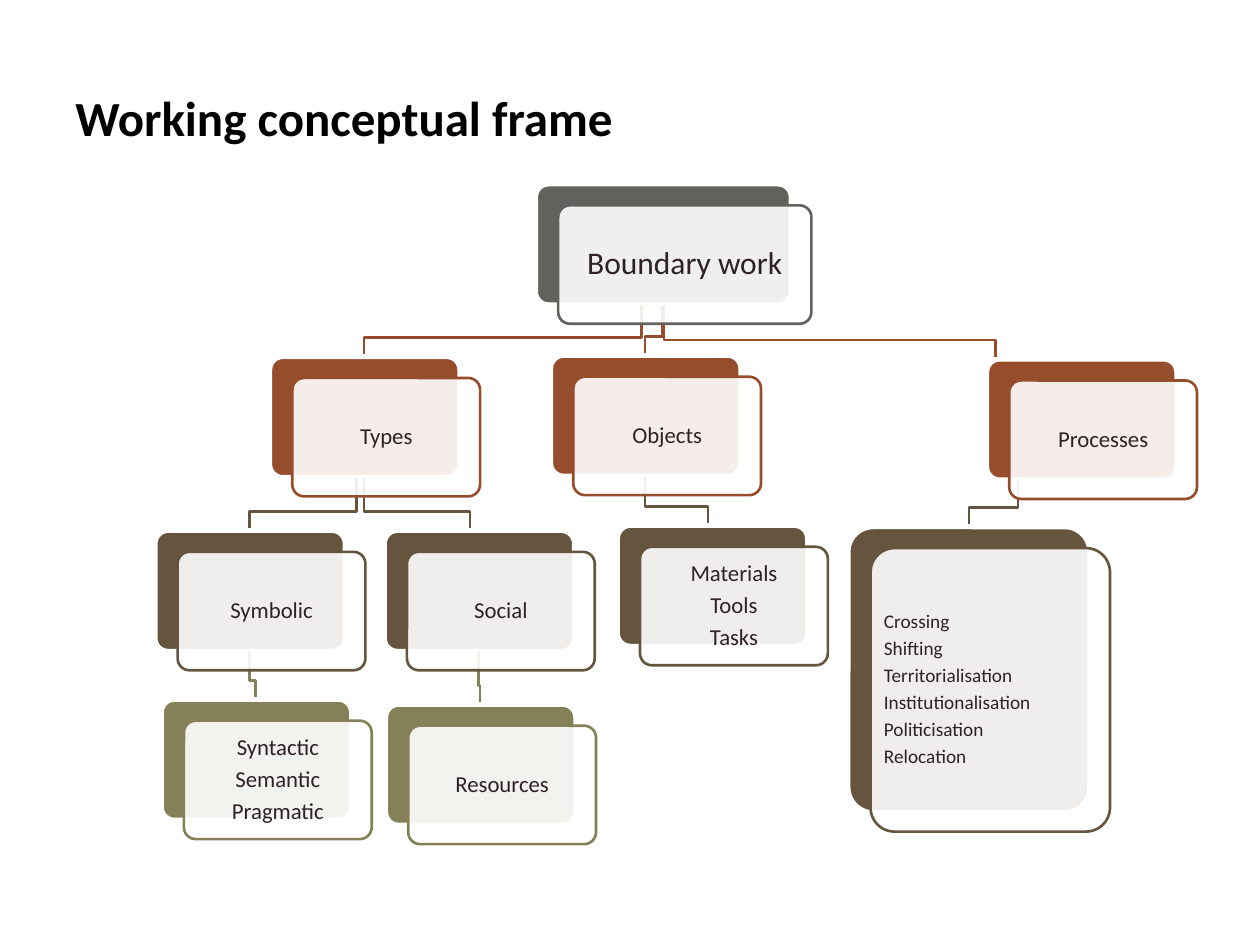
from dataclasses import dataclass

from lxml import etree
from pptx import Presentation
from pptx import util as u
from pptx.dml.color import RGBColor
from pptx.enum import shapes, text
from pptx.oxml.ns import qn


@dataclass(frozen=True)
class Theme:
    font: str = "Calibri"
    white: str = "FFFFFF"
    black: str = "000000"
    ink: str = "2E2224"
    slate: str = "61625E"
    rust: str = "964D2C"
    brown: str = "66553E"
    olive: str = "848058"
    title: int = 28
    root: int = 18
    label: int = 13
    listing: int = 11
    line: float = 1.5


@dataclass(frozen=True)
class Node:
    lines: tuple
    left: float
    top: float
    color: str
    width: float = 1.49
    height: float = 0.94
    size: int = Theme.label
    inset: float = 0.05
    align: text.PP_ALIGN = text.PP_ALIGN.CENTER


THEME = Theme()
SHIFT_X, SHIFT_Y = 0.17, 0.16    # offset of the front card
LINK_GAP, LINK_DROP = 0.03, 0.13  # space above a child, last leg of a link

NODES = {
    "root": Node(("Boundary work",), 4.26, 1.47, THEME.slate, width=2.01,
                 size=THEME.root, inset=0.07),
    "types": Node(("Types",), 2.15, 2.84, THEME.rust),
    "symbolic": Node(("Symbolic",), 1.24, 4.22, THEME.brown),
    "knowledge": Node(("Syntactic", "Semantic", "Pragmatic"), 1.29, 5.56, THEME.olive),
    "social": Node(("Social",), 3.06, 4.22, THEME.brown),
    "resources": Node(("Resources",), 3.07, 5.6, THEME.olive),
    "objects": Node(("Objects",), 4.38, 2.83, THEME.rust),
    "materials": Node(("Materials", "Tools", "Tasks"), 4.91, 4.18, THEME.brown),
    "processes": Node(("Processes",), 7.84, 2.86, THEME.rust),
    "actions": Node(("Crossing", "Shifting", "Territorialisation",
                     "Institutionalisation", "Politicisation", "Relocation"),
                    6.74, 4.19, THEME.brown, width=1.9, height=2.25,
                    size=THEME.listing, align=text.PP_ALIGN.LEFT),
}

# parent, child, x at the parent, x at the child
LINKS = [
    ("processes", "actions", 8.08, 7.69),
    ("root", "processes", 5.27, 7.9),
    ("objects", "materials", 5.12, 5.62),
    ("root", "objects", 5.26, 5.12),
    ("social", "resources", 3.8, 3.81),
    ("types", "social", 2.89, 3.73),
    ("symbolic", "knowledge", 1.98, 2.03),
    ("types", "symbolic", 2.83, 1.98),
    ("root", "types", 5.09, 2.89),
]


def apply(target, formats):
    for name, value in formats.items():
        setattr(target, name, value)


def write(shape, lines, size, color, align, inset_x, inset_y, bold=False, spacing=None):
    frame = shape.text_frame
    apply(frame, {
        "word_wrap": True, "vertical_anchor": text.MSO_ANCHOR.MIDDLE,
        "margin_left": u.Inches(inset_x), "margin_right": u.Inches(inset_x),
        "margin_top": u.Inches(inset_y), "margin_bottom": u.Inches(inset_y),
    })
    for index, line in enumerate(lines):
        para = frame.add_paragraph() if index else frame.paragraphs[0]
        para.alignment = align
        if spacing:
            apply(para, spacing)
        span = para.add_run()
        span.text = line
        apply(span.font, {"name": THEME.font, "size": u.Pt(size), "bold": bold})
        span.font.color.rgb = RGBColor.from_string(color)


def add_title(page, left, top, width, height):
    box = page.shapes.add_textbox(*map(u.Inches, (left, top, width, height)))
    write(box, ["Working conceptual frame"], THEME.title, THEME.black,
          text.PP_ALIGN.LEFT, 0.1, 0.05, bold=True)


def set_line(shape, color):
    shape.shadow.inherit = False
    shape.line.color.rgb = RGBColor.from_string(color)
    shape.line.width = u.Pt(THEME.line)


def add_link(page, parent, child, start_x, end_x):
    end_y = child.top - LINK_GAP
    bend_y = end_y - LINK_DROP
    start, *rest = [
        (u.Inches(x), u.Inches(y)) for x, y in (
            (start_x, parent.top + parent.height), (start_x, bend_y),
            (end_x, bend_y), (end_x, end_y))
    ]
    builder = page.shapes.build_freeform(*start)
    builder.add_line_segments(rest, close=False)
    link = builder.convert_to_shape()
    link.fill.background()
    set_line(link, child.color)


def add_card(page, left, top, width, height, fill, line):
    card = page.shapes.add_shape(shapes.MSO_SHAPE.ROUNDED_RECTANGLE,
                                 *map(u.Inches, (left, top, width, height)))
    card.adjustments[0] = 0.1
    card.fill.solid()
    card.fill.fore_color.rgb = RGBColor.from_string(fill)
    set_line(card, line)
    return card


def add_node(page, node):
    # Coloured card behind, translucent labelled card in front
    add_card(page, node.left, node.top, node.width, node.height, node.color, THEME.white)
    front = add_card(page, node.left + SHIFT_X, node.top + SHIFT_Y,
                     node.width, node.height, THEME.white, node.color)
    tint = front._element.spPr.find(qn("a:solidFill"))[0]
    etree.SubElement(tint, qn("a:alpha")).set("val", "90000")
    write(front, node.lines, node.size, THEME.ink, node.align, node.inset, node.inset,
          spacing={"line_spacing": 0.9, "space_after": u.Pt(node.size * 0.33)})


def add_tree(page):
    for parent, child, start_x, end_x in LINKS:
        add_link(page, NODES[parent], NODES[child], start_x, end_x)
    for node in NODES.values():
        add_node(page, node)


def main():
    deck = Presentation()
    deck.slide_width, deck.slide_height = u.Inches(10), u.Inches(7.5)
    page = deck.slides.add_slide(deck.slide_layouts[6])
    add_title(page, 0.5, 0.3, 9, 1.25)
    add_tree(page)
    deck.save("out.pptx")


if __name__ == "__main__":
    main()
